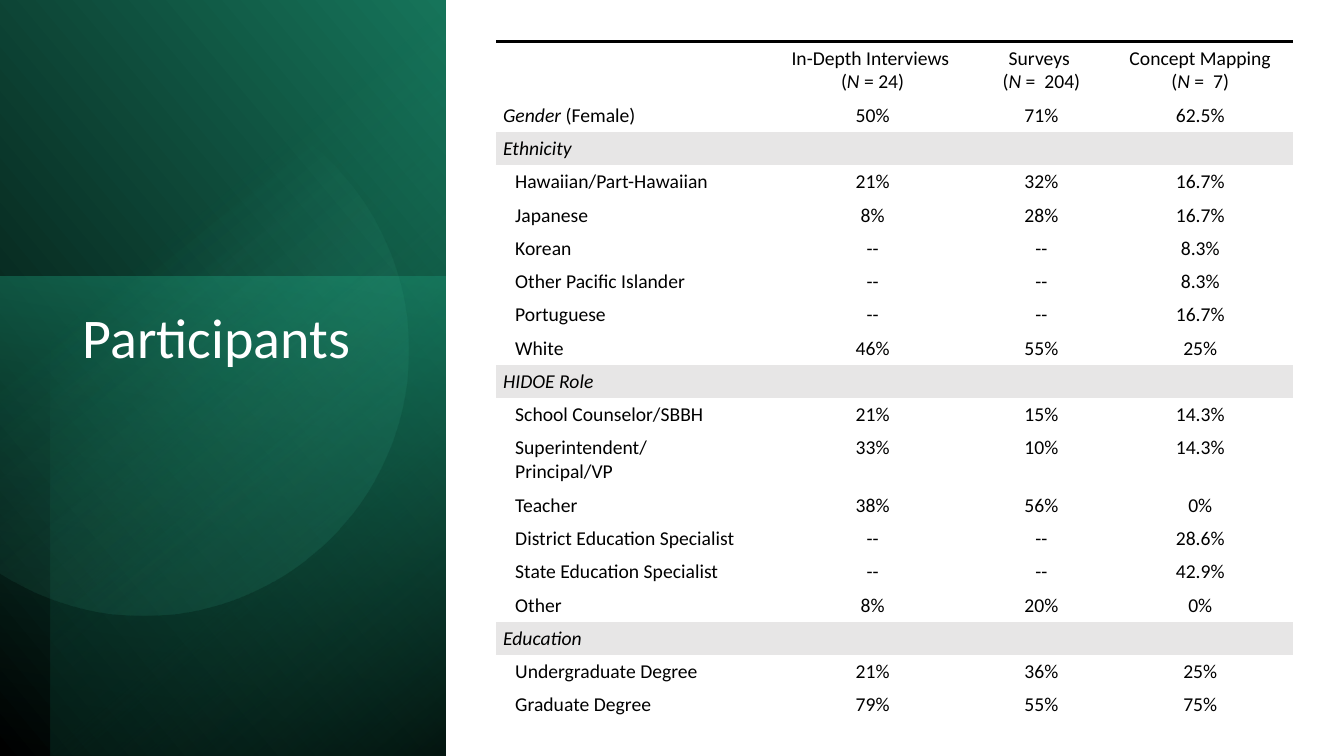
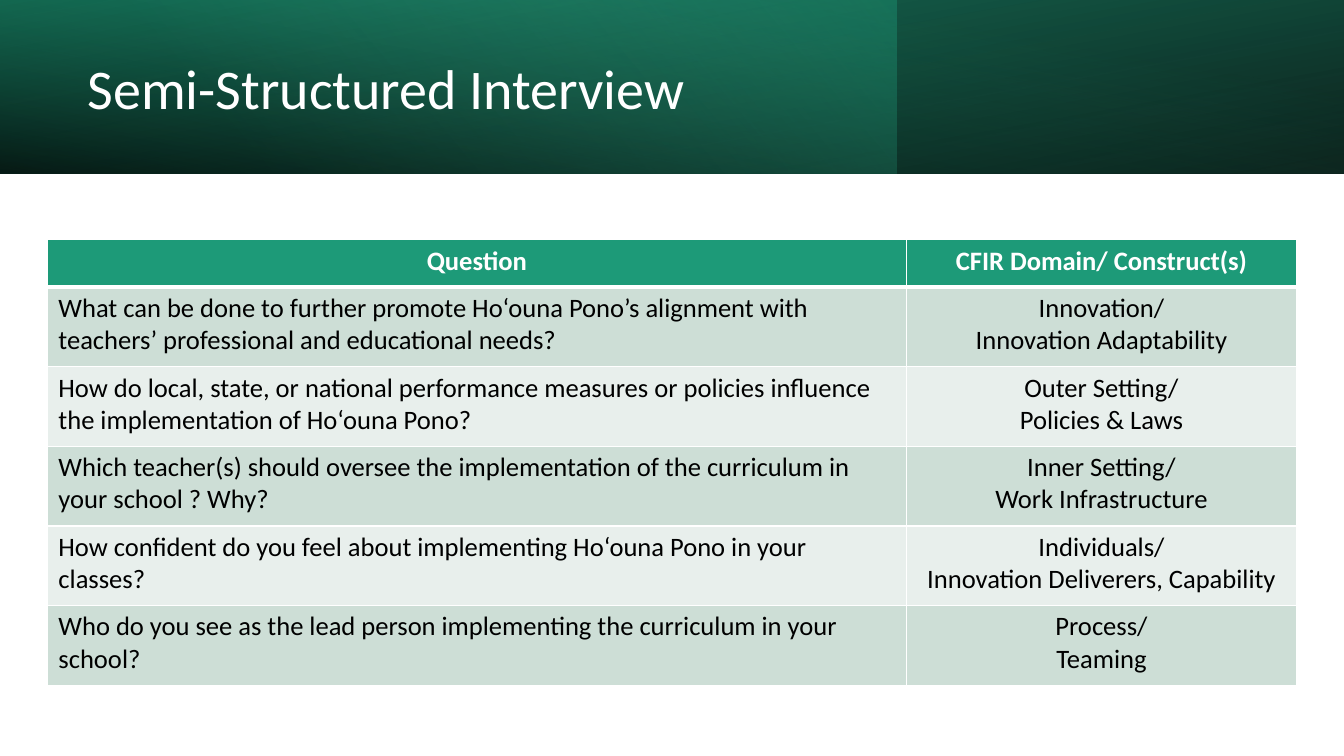
from math import cos, radians, sin

from lxml import etree
from pptx import Presentation
from pptx.dml.color import RGBColor
from pptx.enum.shapes import MSO_SHAPE
from pptx.enum.text import MSO_ANCHOR, MSO_AUTO_SIZE, PP_ALIGN
from pptx.oxml import parse_xml
from pptx.oxml.ns import nsdecls, qn
from pptx.util import Inches, Pt

RECTANGLE = MSO_SHAPE.RECTANGLE
LEFT, CENTER = PP_ALIGN.LEFT, PP_ALIGN.CENTER
TOP, MIDDLE = MSO_ANCHOR.TOP, MSO_ANCHOR.MIDDLE
FONT = "Calibri"
PLAIN_TABLE = "{2D5ABB26-0587-4C30-8999-92F81FD0307C}"
TITLE_ONLY = 5
COLORS = {
    "black": "000000", "white": "FFFFFF", "green": "1D9A78", "deep": "16745A",
    "forest": "0E4D3C", "mint": "5AE0BB", "section": "E7E6E6",
    "odd": "CDDED6", "even": "E8EFEC",
}

PARTICIPANT_HEADER = ["", "In-Depth Interviews \n(*N* = 24)", "Surveys \n(*N* =  204)",
                      "Concept Mapping\n(*N* =  7)"]
PARTICIPANT_GROUPS = [
    ("Ethnicity", [
        ("Hawaiian/Part-Hawaiian", "21%", "32%", "16.7%"),
        ("Japanese", "8%", "28%", "16.7%"),
        ("Korean", "--", "--", "8.3%"),
        ("Other Pacific Islander", "--", "--", "8.3%"),
        ("Portuguese", "--", "--", "16.7%"),
        ("White", "46%", "55%", "25%"),
    ]),
    ("HIDOE Role", [
        ("School Counselor/SBBH", "21%", "15%", "14.3%"),
        ("Superintendent/\nPrincipal/VP", "33%", "10%", "14.3%"),
        ("Teacher", "38%", "56%", "0%"),
        ("District Education Specialist", "--", "--", "28.6%"),
        ("State Education Specialist", "--", "--", "42.9%"),
        ("Other", "8%", "20%", "0%"),
    ]),
    ("Education", [
        ("Undergraduate Degree", "21%", "36%", "25%"),
        ("Graduate Degree", "79%", "55%", "75%"),
    ]),
]
GENDER = ("*Gender* (Female)", "50%", "71%", "62.5%")

INTERVIEW = [
    ("Question", "CFIR Domain/ Construct(s)"),
    ("What can be done to further promote Ho‘ouna Pono’s alignment with teachers’ "
     "professional and educational needs?", "Innovation/\nInnovation Adaptability"),
    ("How do local, state, or national performance measures or policies influence the "
     "implementation of Ho‘ouna Pono?", "Outer Setting/\nPolicies & Laws"),
    ("Which teacher(s) should oversee the implementation of the curriculum in your "
     "school ? Why?", "Inner Setting/\nWork Infrastructure"),
    ("How confident do you feel about implementing Ho‘ouna Pono in your classes?",
     "Individuals/\nInnovation Deliverers, Capability"),
    ("Who do you see as the lead person implementing the curriculum in your school?",
     "Process/\nTeaming"),
]

SIDE_PANELS = [
    dict(box=(0, 0, 4.42, 7.52), stops=[(0, "black", 100), (100, "deep", 100)],
         angle=310, turn=90, flip=True),
    dict(box=(0, 2.74, 4.42, 4.76), stops=[(0, "green", 50), (100, "forest", 0)],
         angle=190, turn=270),
    dict(box=(0.5, 0, 3.92, 7.5), stops=[(0, "black", 59), (69, "green", 0)],
         angle=220, turn=270, flip=True),
]
TOP_BANDS = [
    dict(box=(0, 0, 13.33, 1.72), stops=[(0, "black", 96), (100, "deep", 100)],
         angle=100, turn=180, flip=True),
    dict(box=(0, 0, 8.89, 1.72), stops=[(0, "green", 41), (74, "mint", 0)], angle=140),
    dict(box=(0, 0, 13.33, 1.72), stops=[(0, "black", 63), (78, "green", 15)],
         angle=260, flip=True),
]
DISC_BOX = (-0.82, 1.31, 5.26, 4.47)
DISC_TURN = 101.6
DISC_OUTLINE = [
    ("moveTo", [(1.43, 0.84)]),
    ("cubicBezTo", [(1.6, 0.84), (1.78, 0.86), (1.96, 0.89)]),
    ("cubicBezTo", [(3.38, 1.19), (4.29, 2.58), (4, 4)]),
    ("cubicBezTo", [(3.71, 5.42), (2.32, 6.34), (0.9, 6.05)]),
    ("cubicBezTo", [(0.63, 5.99), (0.38, 5.9), (0.15, 5.77)]),
    ("lnTo", [(0, 5.68)]),
    ("lnTo", [(0, 1.26)]),
    ("lnTo", [(0.2, 1.15)]),
    ("cubicBezTo", [(0.57, 0.95), (0.99, 0.84), (1.43, 0.84)]),
]


def write_text(frame, text, size=14, color="black", bold=False, italic=False,
               align=LEFT, indent=0, spacing=None, after=None):
    for number, line in enumerate(text.split("\n")):
        para = frame.add_paragraph() if number else frame.paragraphs[0]
        para.alignment = align
        if spacing:
            para.line_spacing = spacing
        if after:
            para.space_after = Pt(after)
        if indent:
            para._p.get_or_add_pPr().set("marL", str(Inches(indent)))
        for order, part in enumerate(line.split("*")):
            if part:
                span = para.add_run()
                span.text = part
                span.font.name = FONT
                span.font.size = Pt(size)
                span.font.bold = bold
                span.font.italic = italic or order % 2 == 1
                span.font.color.rgb = RGBColor.from_string(COLORS[color])
        if not line:
            etree.SubElement(para._p, qn("a:endParaRPr"), sz=str(size * 100))


def paint_gradient(shape, stops, angle):
    shape.shadow.inherit = False
    shape.line.fill.background()
    shape.fill.background()
    marks = "".join(
        f'<a:gs pos="{place * 1000}"><a:srgbClr val="{COLORS[color]}">'
        f'<a:alpha val="{opacity * 1000}"/></a:srgbClr></a:gs>'
        for place, color, opacity in stops)
    gradient = parse_xml(
        f'<a:gradFill {nsdecls("a")} rotWithShape="1"><a:gsLst>{marks}</a:gsLst>'
        f'<a:lin ang="{angle * 60000}" scaled="0"/></a:gradFill>')
    properties = shape.element.spPr
    properties.replace(properties.find(qn("a:noFill")), gradient)


def add_panel(page, box, stops, angle, turn=0, flip=False):
    left, top, width, height = box
    if turn % 180:
        left, top = left + (width - height) / 2, top + (height - width) / 2
        width, height = height, width
    panel = page.shapes.add_shape(RECTANGLE, Inches(left), Inches(top),
                                  Inches(width), Inches(height))
    panel.rotation = turn
    if flip:
        panel.element.spPr.find(qn("a:xfrm")).set("flipH", "1")
    paint_gradient(panel, stops, angle)


def add_disc(page):
    left, top, width, height = DISC_BOX
    cosine, sine = cos(radians(DISC_TURN)), sin(radians(DISC_TURN))

    def unturn(x, y):
        across, down = x - left - width / 2, y - top - height / 2
        return (Inches(across * cosine + down * sine + width / 2),
                Inches(down * cosine - across * sine + height / 2))

    builder = page.shapes.build_freeform(0, 0)
    builder.add_line_segments([(Inches(width), 0), (Inches(width), Inches(height))])
    disc = builder.convert_to_shape()
    disc.left, disc.top, disc.width, disc.height = map(Inches, DISC_BOX)
    disc.rotation = DISC_TURN
    outline = next(disc.element.iter(qn("a:path")))
    for step in list(outline):
        outline.remove(step)
    outline.set("w", str(Inches(width)))
    outline.set("h", str(Inches(height)))
    for kind, points in DISC_OUTLINE:
        step = etree.SubElement(outline, qn(f"a:{kind}"))
        for point in points:
            x, y = unturn(*point)
            etree.SubElement(step, qn("a:pt"), x=str(x), y=str(y))
    etree.SubElement(outline, qn("a:close"))
    paint_gradient(disc, [(39, "mint", 0), (100, "deep", 26)], 310)


def add_page(deck, title_text, title_box, anchor, panels):
    page = deck.slides.add_slide(deck.slide_layouts[TITLE_ONLY])
    for panel in panels:
        add_panel(page, **panel)
    title = page.shapes.title
    title.left, title.top, title.width, title.height = map(Inches, title_box)
    title.text_frame.auto_size = MSO_AUTO_SIZE.NONE
    title.text_frame.vertical_anchor = anchor
    write_text(title.text_frame, title_text, size=40, color="white", spacing=0.9)
    return page


def raise_title(page):
    title = page.shapes.title.element
    title.getparent().append(title)


def add_grid(page, left, top, widths, heights):
    table = page.shapes.add_table(
        len(heights), len(widths), Inches(left), Inches(top),
        Inches(sum(widths)), Inches(sum(heights))).table
    table.first_row = table.horz_banding = False
    table._tbl.tblPr.find(qn("a:tableStyleId")).text = PLAIN_TABLE
    for column, width in zip(table.columns, widths):
        column.width = Inches(width)
    for row, height in zip(table.rows, heights):
        row.height = Inches(height)
    return table


def format_cell(cell, text, side=0.07, bottom=0.05, fill=None, borders=(), **style):
    cell.margin_left = cell.margin_right = Inches(side)
    cell.margin_top, cell.margin_bottom = Inches(0.05), Inches(bottom)
    for edge, color, width in borders:
        cell._tc.get_or_add_tcPr().append(parse_xml(
            f'<a:ln{edge} {nsdecls("a")} w="{Pt(width)}"><a:solidFill>'
            f'<a:srgbClr val="{COLORS[color]}"/></a:solidFill></a:ln{edge}>'))
    if fill:
        cell.fill.solid()
        cell.fill.fore_color.rgb = RGBColor.from_string(COLORS[fill])
    else:
        cell.fill.background()
    write_text(cell.text_frame, text, **style)


def build_participants(deck):
    page = add_page(deck, "Participants", (0.72, 3.03, 3.15, 3.36), TOP, SIDE_PANELS)
    add_disc(page)
    raise_title(page)
    rows = [("header", PARTICIPANT_HEADER), ("top", GENDER)]
    for name, members in PARTICIPANT_GROUPS:
        rows.append(("section", (name, "", "", "")))
        rows += [("member", member) for member in members]
    heights = [0.57 if any("\n" in text for text in values) else 0.33 for _, values in rows]
    table = add_grid(page, 4.92, 0.41, [2.72, 2.03, 1.32, 1.83], heights)
    for row, (kind, values) in enumerate(rows):
        for column, text in enumerate(values):
            format_cell(
                table.cell(row, column), text, bottom=0.04,
                fill="section" if kind == "section" else None,
                borders=[("T", "black", 2.25)] if kind == "header" else (),
                italic=kind == "section",
                align=CENTER if column else LEFT,
                indent=0.12 if kind == "member" and not column else 0)


def build_interview(deck):
    page = add_page(deck, "Semi-Structured Interview", (0.77, 0.27, 7.72, 1.27),
                    MIDDLE, TOP_BANDS)
    raise_title(page)
    heights = [0.47] + [0.79] * (len(INTERVIEW) - 1)
    table = add_grid(page, 0.47, 2.38, [8.52, 3.87], heights)
    for row, values in enumerate(INTERVIEW):
        header = row == 0
        edges = {"L": 1, "R": 1, "T": 3 if row == 1 else 1, "B": 3 if header else 1}
        for column, text in enumerate(values):
            format_cell(
                table.cell(row, column), text, side=0.11, size=19, bold=header,
                fill="green" if header else "odd" if row % 2 else "even",
                color="white" if header else "black",
                borders=[(edge, "white", width) for edge, width in edges.items()],
                align=CENTER if header or column else LEFT,
                after=None if header or column else 6)


def main():
    deck = Presentation()
    deck.slide_width, deck.slide_height = Inches(13.33), Inches(7.5)
    build_participants(deck)
    build_interview(deck)
    deck.save("out.pptx")


if __name__ == "__main__":
    main()
